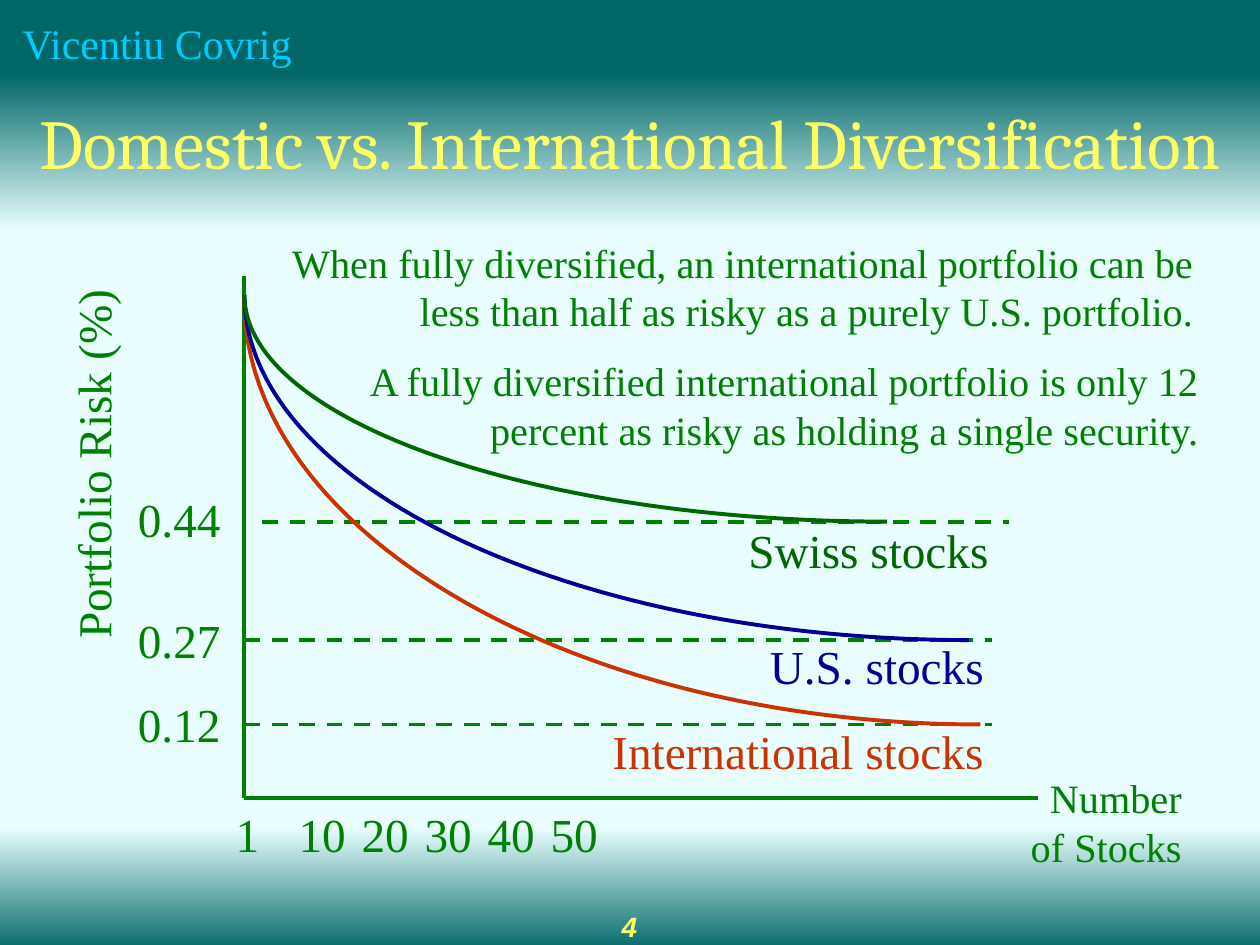
import pptx
import pptx.util
import pptx.dml.color
import pptx.enum.dml
import pptx.enum.shapes
import pptx.enum.text
import pptx.oxml.ns
from lxml import etree

Inches = pptx.util.Inches
Align = pptx.enum.text.PP_ALIGN
qn = pptx.oxml.ns.qn

TEAL, PALE, GREEN, YELLOW = "006666", "E9FFFF", "008000", "FFFF66"
SERIF = "Times New Roman"
ARC = 0.55  # Bezier factor of a quarter ellipse

# name, value, colour, depth of level, dash start, curve top, curve width,
# value label rise, name label (left, rise, width)
SERIES = [
    ("International stocks", "0.12", "CC3300", 3.56, 0, 0.19, 5.84, 0.29, (2.81, 0.08, 3.43)),
    ("U.S. stocks", "0.27", "000099", 2.89, 0, 0.15, 5.75, 0.29, (4.06, 0.08, 2.5)),
    ("Swiss stocks", "0.44", "006600", 1.95, 0.14, 0.15, 5.1, 0.31, (3.89, 0.06, 2.5)),
]


def color(code):
    return pptx.dml.color.RGBColor.from_string(code)


def write(frame, text, size=27, font=SERIF, ink=GREEN, align=Align.LEFT,
          bold=False, italic=False, spacing=None, inset=(0.11, 0.06)):
    frame.word_wrap = True
    frame.margin_left = frame.margin_right = Inches(inset[0])
    frame.margin_top = frame.margin_bottom = Inches(inset[1])
    para = frame.paragraphs[0]
    para.alignment = align
    if spacing:
        para.line_spacing = spacing
    run = para.add_run()
    run.text = text
    run.font.size = pptx.util.Pt(size)
    run.font.name = font
    run.font.bold, run.font.italic = bold, italic
    run.font.color.rgb = color(ink)


def label(slide, text, x, y, w, h, turn=0, **style):
    box = slide.shapes.add_textbox(Inches(x), Inches(y), Inches(w), Inches(h))
    box.rotation = turn
    write(box.text_frame, text, **style)


def fade(shape, first, last):
    shape.fill.gradient()
    shape.fill.gradient_angle = 270
    for stop, code, place in zip(shape.fill.gradient_stops, (first, last), (0, 1)):
        stop.color.rgb = color(code)
        stop.position = place


def band(slide, x, y, w, h):
    shape = slide.shapes.add_shape(pptx.enum.shapes.MSO_SHAPE.RECTANGLE,
                                   Inches(x), Inches(y), Inches(w), Inches(h))
    shape.shadow.inherit = False
    shape.line.fill.background()
    return shape


def stroke(shape, code):
    shape.line.color.rgb = color(code)
    shape.line.width = pptx.util.Pt(2.25)


def rule(slide, x1, y1, x2, y2, dash=False):
    line = slide.shapes.add_connector(pptx.enum.shapes.MSO_CONNECTOR.STRAIGHT,
                                      Inches(x1), Inches(y1), Inches(x2), Inches(y2))
    stroke(line, GREEN)
    if dash:
        line.line.dash_style = pptx.enum.dml.MSO_LINE.DASH
    etree.SubElement(line.element.spPr, qn("a:effectLst"))


def curve(slide, x, y, w, h, code):
    """Quarter ellipse from the bottom right to the top left of the box."""
    pen = slide.shapes.build_freeform(Inches(x + w), Inches(y + h))
    points = [(x + w * (1 - ARC), y + h), (x, y + h * ARC), (x, y)]
    pen.add_line_segments([(Inches(a), Inches(b)) for a, b in points], close=False)
    shape = pen.convert_to_shape()
    shape.shadow.inherit = False
    shape.fill.background()
    stroke(shape, code)
    # Turn the three segments into one cubic curve
    track = shape.element.find(".//" + qn("a:path"))
    bend = etree.SubElement(track, qn("a:cubicBezTo"))
    for part in track.findall(qn("a:lnTo")):
        bend.append(part[0])
        track.remove(part)


def frame(slide, x, y, w, h):
    # Bottom and top bands
    fade(band(slide, x - 0.02, y + h - 0.94, w + 0.12, 1), PALE, TEAL)
    top = band(slide, x, y, w + 0.06, 0.69)
    top.fill.solid()
    top.fill.fore_color.rgb = color(TEAL)
    # Author and page number
    label(slide, "Vicentiu Covrig", x + 0.08, y + 0.2, 4.08, 0.38,
          size=24, ink="00CCFF", spacing=0.7, inset=(0.1, 0.05))
    label(slide, "4", x + 3.83, y + h - 0.33, 2.33, 0.5, size=16, font="Arial",
          ink=YELLOW, bold=True, italic=True, align=Align.CENTER, inset=(0.1, 0.05))


def head(slide, x, y, w, h):
    title = slide.shapes.title
    title.left, title.top = Inches(x), Inches(y)
    title.width, title.height = Inches(w), Inches(h)
    fade(title, TEAL, PALE)
    title.text_frame.vertical_anchor = pptx.enum.text.MSO_ANCHOR.MIDDLE
    write(title.text_frame, "Domestic vs. International Diversification", size=40,
          font="Cambria", ink=YELLOW, align=Align.CENTER, spacing=0.7, inset=(0.1, 0.05))
    slide.shapes.element.append(title.element)  # in front of the top band


def plot(slide, x, y, w, h):
    # Axes
    rule(slide, x, y + h, x, y)
    rule(slide, x, y + h, x + w, y + h)
    label(slide, "Portfolio Risk (%)", x - 2.79, y + 1.3, 3.17, 0.57,
          turn=270, align=Align.RIGHT)
    label(slide, "Number of Stocks", x + w - 0.32, y + h - 0.25, 1.57, 0.88,
          size=23, align=Align.RIGHT)
    label(slide, "1\t10\t20\t30\t40\t50", x - 0.18, y + h, w, 0.58)
    # Dashed levels with their values
    for _, value, _, level, start, _, _, rise, _ in SERIES:
        rule(slide, x + start, y + level, x + start + 5.93, y + level, dash=True)
        label(slide, value, x - 1.01, y + level - rise, 0.93, 0.58, align=Align.RIGHT)
    # Curves with their names
    for name, _, code, level, _, top, wide, _, (left, rise, span) in SERIES:
        curve(slide, x, y + top, wide, level - top, code)
        label(slide, name, x + left, y + level - rise, span, 0.56, ink=code)


def notes(slide, x, y, w, h):
    style = dict(size=23, align=Align.RIGHT)
    label(slide, "When fully diversified, an international portfolio can be "
          "less than half as risky as a purely U.S. portfolio.",
          x, y, w - 0.04, 0.89, **style)
    label(slide, "A fully diversified international portfolio is only "
          "12 percent as risky as holding a single security.",
          x + 0.64, y + h - 0.89, w - 0.64, 0.89, **style)


def main():
    deck = pptx.Presentation()
    deck.slide_width, deck.slide_height = Inches(10), Inches(7.5)
    slide = deck.slides.add_slide(deck.slide_layouts[5])
    slide.background.fill.solid()
    slide.background.fill.fore_color.rgb = color(PALE)
    frame(slide, 0, 0, 10, 7.5)
    head(slide, 0, 0.58, 10, 1.25)
    plot(slide, 1.94, 2.19, 6.3, 4.14)
    notes(slide, 2.18, 1.83, 7.45, 1.83)
    deck.save("out.pptx")


if __name__ == "__main__":
    main()
